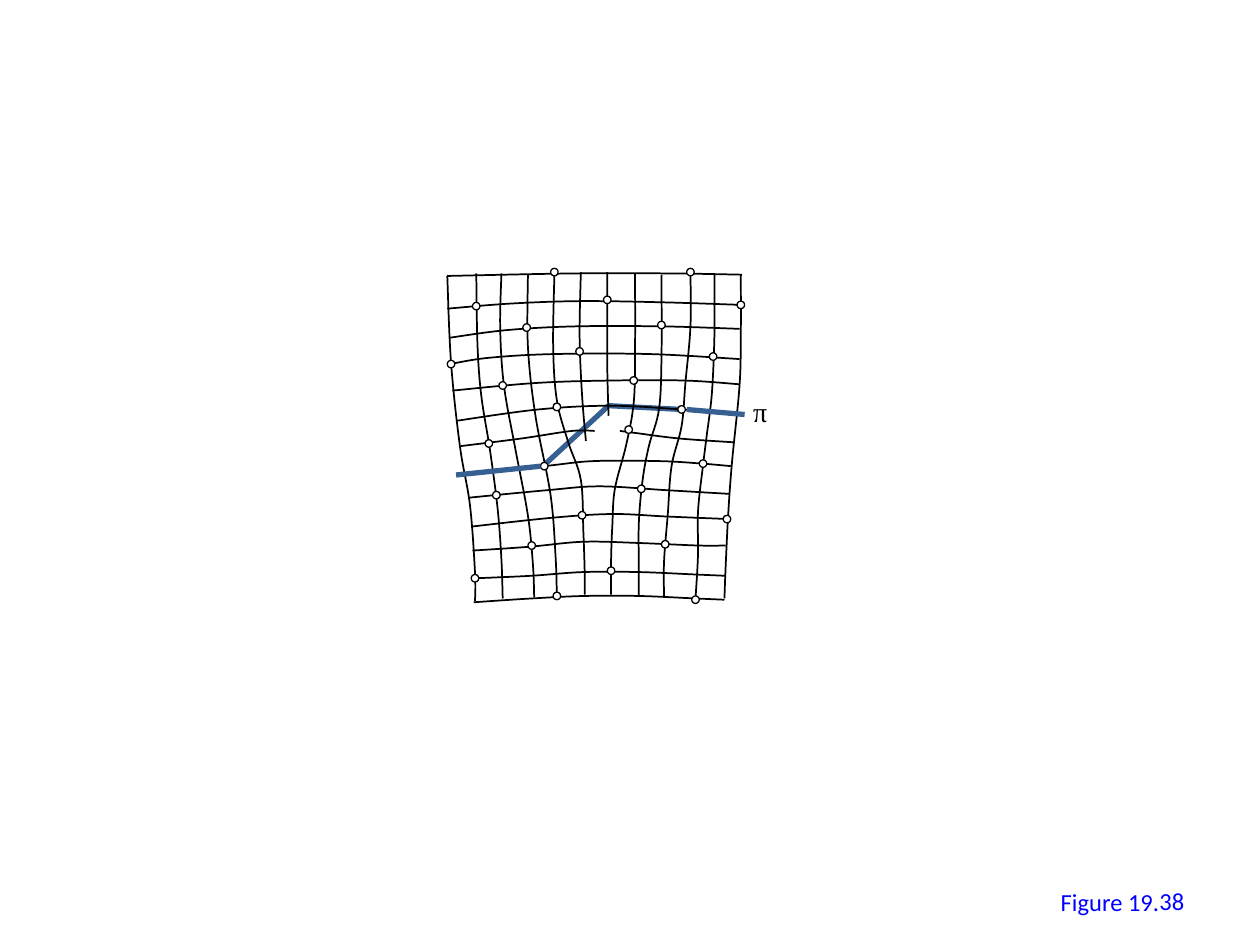
from dataclasses import dataclass
from typing import NamedTuple, Sequence

from pptx import Presentation
from pptx.dml.color import RGBColor
from pptx.enum.shapes import MSO_CONNECTOR as Connector, MSO_SHAPE as Shape
from pptx.enum.text import MSO_ANCHOR as Anchor, MSO_AUTO_SIZE as AutoSize, PP_ALIGN as Align
from pptx.oxml.ns import qn
from pptx.oxml.xmlchemy import OxmlElement
from pptx.util import Inches, Pt


@dataclass(frozen=True)
class Theme:
    ink: RGBColor = RGBColor(0x00, 0x00, 0x00)
    paper: RGBColor = RGBColor(0xFF, 0xFF, 0xFF)
    boundary: RGBColor = RGBColor(0x37, 0x60, 0x92)
    caption: RGBColor = RGBColor(0x00, 0x00, 0xFF)
    caption_font: str = "Calibri"
    symbol_font: str = "Times New Roman"
    caption_size: float = 14
    symbol_size: float = 16
    grid_width: float = 1
    node_width: float = 0.75
    boundary_width: float = 3


class Point(NamedTuple):
    x: float
    y: float


class Label(NamedTuple):
    text: str
    left: float
    top: float
    width: float
    height: float
    font: str
    size: float
    color: RGBColor


THEME = Theme()
NODE_DIAMETER = 0.06

# Lattice rows, top to bottom; the seventh is broken by the dislocation
ROWS = [
    [(3.55, 2.19), (4.56, 2.17), (5.31, 2.17), (5.89, 2.18)],
    [(3.55, 2.45), (4.05, 2.41), (4.61, 2.39), (5.27, 2.4), (5.88, 2.42)],
    [(3.57, 2.68), (4.02, 2.62), (4.57, 2.59), (5.25, 2.59), (5.87, 2.61)],
    [(3.57, 2.89), (3.88, 2.84), (4.4, 2.81), (5.15, 2.81), (5.87, 2.85)],
    [(3.59, 3.1), (4.25, 3.04), (4.85, 3.02), (5.43, 3.02), (5.87, 3.05)],
    [(3.62, 3.34), (4.27, 3.25), (4.85, 3.22), (5.42, 3.25), (5.85, 3.28)],
    [(3.66, 3.54), (4.14, 3.48), (4.54, 3.42), (4.72, 3.42)],
    [(4.92, 3.42), (5.07, 3.44), (5.39, 3.48), (5.82, 3.51)],
    [(3.7, 3.76), (4.32, 3.7), (4.71, 3.66), (5.23, 3.66), (5.57, 3.68), (5.8, 3.7)],
    [(3.72, 3.95), (4.35, 3.89), (4.76, 3.86), (5.28, 3.89), (5.62, 3.91), (5.79, 3.92)],
    [(3.74, 4.18), (4.38, 4.11), (4.86, 4.08), (5.29, 4.1), (5.78, 4.12)],
    [(3.75, 4.37), (4.2, 4.34), (4.63, 4.3), (5.07, 4.31), (5.54, 4.33), (5.76, 4.33)],
    [(3.76, 4.59), (4.21, 4.57), (4.63, 4.54), (5.07, 4.54), (5.53, 4.56), (5.76, 4.57)],
    [(3.76, 4.78), (4.22, 4.75), (4.64, 4.73), (5.07, 4.73), (5.52, 4.75), (5.75, 4.76)],
]

# Lattice columns, left to right; the sixth and seventh end at the dislocation
COLUMNS = [
    [(3.55, 2.19), (3.58, 2.88), (3.65, 3.54), (3.73, 4.01), (3.77, 4.55), (3.77, 4.77)],
    [(3.78, 2.17), (3.79, 2.74), (3.82, 3.14), (3.89, 3.58), (3.95, 4.04), (3.98, 4.44),
     (3.99, 4.75)],
    [(3.98, 2.17), (3.97, 2.6), (4, 3.06), (4.09, 3.56), (4.19, 4.09), (4.23, 4.48),
     (4.24, 4.74)],
    [(4.19, 2.18), (4.19, 2.75), (4.25, 3.3), (4.37, 3.93), (4.41, 4.42), (4.42, 4.74)],
    [(4.4, 2.17), (4.39, 2.75), (4.42, 3.18), (4.51, 3.51), (4.61, 3.81), (4.63, 4.22),
     (4.64, 4.53), (4.64, 4.72)],
    [(4.61, 2.16), (4.6, 2.67), (4.62, 3.14), (4.65, 3.5)],
    [(4.82, 2.16), (4.82, 2.55), (4.82, 2.94), (4.83, 3.3)],
    [(5.04, 2.17), (5.04, 2.76), (5.03, 3.19), (4.97, 3.53), (4.88, 3.88), (4.86, 4.17),
     (4.85, 4.44), (4.85, 4.72)],
    [(5.25, 2.18), (5.25, 2.84), (5.23, 3.25), (5.15, 3.54), (5.1, 3.81), (5.07, 4.15),
     (5.07, 4.49), (5.07, 4.73)],
    [(5.48, 2.17), (5.48, 2.59), (5.44, 3.04), (5.41, 3.38), (5.33, 3.7), (5.3, 4.08),
     (5.27, 4.46), (5.27, 4.73)],
    [(5.67, 2.18), (5.67, 2.66), (5.65, 3.12), (5.61, 3.45), (5.58, 3.69), (5.54, 4.06),
     (5.54, 4.4), (5.52, 4.75)],
    [(5.88, 2.18), (5.88, 2.65), (5.87, 3.06), (5.81, 3.67), (5.78, 4.08), (5.76, 4.49),
     (5.75, 4.75)],
]

# Upper left corners of the open circles
NODES = [
    (4.37, 2.13), (5.45, 2.13), (5.85, 2.39), (4.79, 2.35), (3.75, 2.4), (4.15, 2.57),
    (5.22, 2.55), (3.55, 2.86), (4.57, 2.76), (5.63, 2.8), (5, 2.99), (3.96, 3.03),
    (4.39, 3.2), (5.38, 3.22), (3.85, 3.49), (4.96, 3.38), (4.29, 3.67), (5.55, 3.65),
    (5.06, 3.85), (3.91, 3.9), (4.59, 4.06), (5.74, 4.09), (5.25, 4.29), (4.19, 4.3),
    (3.74, 4.56), (4.82, 4.5), (5.49, 4.73), (4.39, 4.7),
]

FIGURE_LABEL = Label("Figure 19.", 8.32, 6.99, 0.99, 0.34,
                     THEME.caption_font, THEME.caption_size, THEME.caption)
NUMBER_LABEL = Label("38", 7.17, 6.95, 2.33, 0.4,
                     THEME.caption_font, THEME.caption_size, THEME.caption)
PI_LABEL = Label("π", 5.88, 3.08, 0.33, 0.37,
                 THEME.symbol_font, THEME.symbol_size, THEME.ink)


def set_line(shape, color: RGBColor, width: float) -> None:
    shape.line.color.rgb = color
    shape.line.width = Pt(width)


def smooth_outline(shape) -> None:
    """Turn the straight segments into a Catmull-Rom curve through the same points."""
    outline = shape._element.find(".//" + qn("a:path"))
    knots = [Point(int(pt.get("x")), int(pt.get("y"))) for pt in outline.iter(qn("a:pt"))]
    padded = [knots[0], *knots, knots[-1]]
    for segment, before, start, end, after in zip(
            outline.findall(qn("a:lnTo")), padded, padded[1:], padded[2:], padded[3:]):
        controls = [
            Point(start.x + (end.x - before.x) / 6, start.y + (end.y - before.y) / 6),
            Point(end.x - (after.x - start.x) / 6, end.y - (after.y - start.y) / 6),
            end,
        ]
        curve = OxmlElement("a:cubicBezTo")
        for control in controls:
            pt = OxmlElement("a:pt")
            pt.set("x", str(round(control.x)))
            pt.set("y", str(round(control.y)))
            curve.append(pt)
        outline.replace(segment, curve)


def add_line(slide, points: Sequence, color: RGBColor, width: float, smooth: bool = False) -> None:
    start, *rest = [(Inches(x), Inches(y)) for x, y in points]
    builder = slide.shapes.build_freeform(*start)
    builder.add_line_segments(rest, close=False)
    shape = builder.convert_to_shape()
    shape.shadow.inherit = False
    shape.fill.background()
    set_line(shape, color, width)
    if smooth:
        smooth_outline(shape)


def add_node(slide, left: float, top: float) -> None:
    diameter = Inches(NODE_DIAMETER)
    shape = slide.shapes.add_shape(Shape.OVAL, Inches(left), Inches(top), diameter, diameter)
    shape.shadow.inherit = False
    shape.fill.solid()
    shape.fill.fore_color.rgb = THEME.paper
    set_line(shape, THEME.ink, THEME.node_width)


def add_connector(slide, start: Point, end: Point) -> None:
    ends = [Inches(value) for value in (*start, *end)]
    connector = slide.shapes.add_connector(Connector.STRAIGHT, *ends)
    set_line(connector, THEME.boundary, THEME.boundary_width)
    connector._element.spPr.append(OxmlElement("a:effectLst"))


def write_label(shape, label: Label) -> None:
    run = shape.text_frame.paragraphs[0].add_run()
    run.text = label.text
    run.font.name = label.font
    run.font.size = Pt(label.size)
    run.font.color.rgb = label.color


def add_label(slide, label: Label) -> None:
    box = slide.shapes.add_textbox(*[Inches(value) for value in label[1:5]])
    box.text_frame.word_wrap = False
    box.text_frame.auto_size = AutoSize.SHAPE_TO_FIT_TEXT
    write_label(box, label)


def place_title(slide, label: Label) -> None:
    title = slide.shapes.title
    title.left, title.top, title.width, title.height = [Inches(value) for value in label[1:5]]
    title.text_frame.auto_size = AutoSize.NONE
    title.text_frame.vertical_anchor = Anchor.MIDDLE
    title.text_frame.paragraphs[0].alignment = Align.RIGHT
    write_label(title, label)


def main() -> None:
    presentation = Presentation()
    presentation.slide_width, presentation.slide_height = Inches(10), Inches(7.5)
    slide = presentation.slides.add_slide(presentation.slide_layouts[5])

    # Figure caption
    place_title(slide, NUMBER_LABEL)
    add_label(slide, FIGURE_LABEL)

    # Boundary behind the lattice
    add_line(slide, [(4.32, 3.69), (4.83, 3.22), (5.41, 3.25)],
             THEME.boundary, THEME.boundary_width)
    add_label(slide, PI_LABEL)

    # Distorted lattice and its nodes
    for points in ROWS + COLUMNS:
        add_line(slide, points, THEME.ink, THEME.grid_width, smooth=True)
    for left, top in NODES:
        add_node(slide, left, top)

    # Outer ends of the boundary
    add_connector(slide, Point(3.62, 3.77), Point(4.29, 3.7))
    add_connector(slide, Point(5.45, 3.25), Point(5.91, 3.29))

    presentation.save("out.pptx")


if __name__ == "__main__":
    main()
